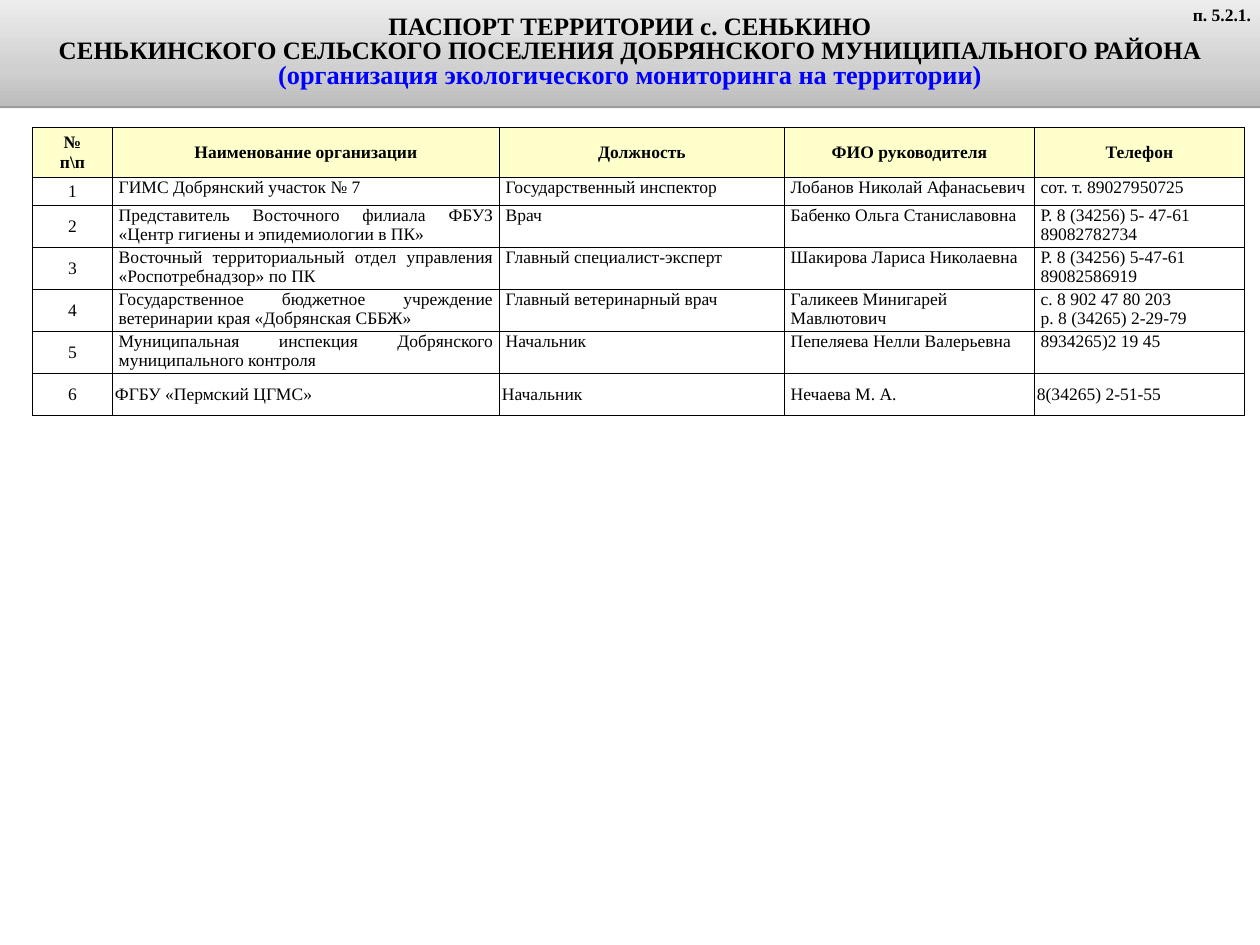
from dataclasses import dataclass

from lxml import etree
from pptx import Presentation
from pptx.dml.color import RGBColor
from pptx.enum import text as tx
from pptx.oxml import ns
from pptx.util import Pt

MAIN = ns.nsdecls("a")


@dataclass(frozen=True)
class Theme:
    font: str = "Times New Roman"
    ink: str = "000000"
    blue: str = "0000FF"
    head: str = "FFFFCC"
    body: str = "FFFFFF"
    grad: tuple = ((0, "BCBCBC"), (35, "D0D0D0"), (100, "EDEDED"))
    title: float = 20
    sub: float = 21
    text: float = 14
    line: float = 1


THEME = Theme()

TITLE = (
    ("ПАСПОРТ ТЕРРИТОРИИ с. СЕНЬКИНО", THEME.title, THEME.ink),
    ("СЕНЬКИНСКОГО СЕЛЬСКОГО ПОСЕЛЕНИЯ ДОБРЯНСКОГО МУНИЦИПАЛЬНОГО РАЙОНА",
     THEME.title, THEME.ink),
    ("(организация экологического мониторинга на территории)",
     THEME.sub, THEME.blue),
)
HEADS = ("№\nп\\п", "Наименование организации", "Должность",
         "ФИО руководителя", "Телефон")
STAFF = (
    ("ГИМС Добрянский участок № 7", "Государственный инспектор",
     "Лобанов Николай Афанасьевич", "сот. т. 89027950725"),
    ("Представитель Восточного филиала ФБУЗ «Центр гигиены и эпидемиологии в ПК»",
     "Врач", "Бабенко Ольга Станиславовна",
     "Р. 8 (34256) 5- 47-61\n89082782734"),
    ("Восточный территориальный отдел управления «Роспотребнадзор» по ПК",
     "Главный специалист-эксперт", "Шакирова Лариса Николаевна",
     "Р. 8 (34256) 5-47-61\n89082586919"),
    ("Государственное бюджетное учреждение ветеринарии края «Добрянская СББЖ»",
     "Главный ветеринарный врач", "Галикеев Минигарей Мавлютович",
     "с. 8 902 47 80 203\nр. 8 (34265) 2-29-79"),
    ("Муниципальная инспекция Добрянского муниципального контроля",
     "Начальник", "Пепеляева Нелли Валерьевна", "8934265)2 19 45"),
    ("ФГБУ «Пермский ЦГМС»", "Начальник", "Нечаева М. А.", "8(34265) 2-51-55"),
)
COLS = (64, 309.6, 228, 200, 168)
ROWS = (40, 22.4) + (33.6,) * 5


def assign(item, values):
    for name, value in values.items():
        setattr(item, name, value)


def style(para, align, size=THEME.text, color=THEME.ink, bold=False):
    para.alignment = align
    for run in para.runs:
        assign(run.font, {"name": THEME.font, "size": Pt(size), "bold": bold})
        run.font.color.rgb = RGBColor.from_string(color)


def place(shape, box):
    names = ("left", "top", "width", "height")
    assign(shape, dict(zip(names, map(Pt, box))))


def inset(item, wide, high):
    assign(item, {"margin_left": Pt(wide), "margin_right": Pt(wide),
                  "margin_top": Pt(high), "margin_bottom": Pt(high)})


def banner(slide, box):
    shape = slide.shapes.title
    place(shape, box)
    stops = "".join(
        f'<a:gs pos="{pos * 1000}"><a:srgbClr val="{color}"/></a:gs>'
        for pos, color in THEME.grad)
    parts = (
        f'<a:prstGeom {MAIN} prst="rect"><a:avLst/></a:prstGeom>',
        f'<a:gradFill {MAIN} rotWithShape="1"><a:gsLst>{stops}</a:gsLst>'
        '<a:lin ang="16200000" scaled="0"/></a:gradFill>',
        f'<a:ln {MAIN}><a:noFill/></a:ln>',
        f'<a:effectLst {MAIN}><a:outerShdw blurRad="0" dist="{Pt(1.6)}" '
        f'dir="5400000" rotWithShape="0"><a:srgbClr val="{THEME.ink}">'
        '<a:alpha val="38000"/></a:srgbClr></a:outerShdw></a:effectLst>',
    )
    for part in parts:
        shape._element.spPr.append(etree.fromstring(part))
    frame = shape.text_frame
    assign(frame, {"word_wrap": True, "auto_size": tx.MSO_AUTO_SIZE.NONE,
                   "vertical_anchor": tx.MSO_ANCHOR.MIDDLE})
    inset(frame, 7.2, 3.6)
    frame.text = "\n".join(line for line, _, _ in TITLE)
    for para, (_, size, color) in zip(frame.paragraphs, TITLE):
        para.line_spacing = 0.8
        style(para, tx.PP_ALIGN.CENTER, size, color, True)


def label(slide, box):
    frame = slide.shapes.add_textbox(*map(Pt, box)).text_frame
    frame.word_wrap = True
    inset(frame, 7.2, 3.6)
    frame.text = "п. 5.2.1."
    style(frame.paragraphs[0], tx.PP_ALIGN.RIGHT, bold=True)


def border(cell):
    props = cell._tc.get_or_add_tcPr()
    for side in "LRTB":
        props.append(etree.fromstring(
            f'<a:ln{side} {MAIN} w="{Pt(THEME.line)}"><a:solidFill>'
            f'<a:srgbClr val="{THEME.ink}"/></a:solidFill></a:ln{side}>'))


def fill_cell(cell, words, row, col):
    head, last = row == 0, row == len(STAFF)
    mid = head or last or col == 0
    border(cell)
    cell.fill.solid()
    cell.fill.fore_color.rgb = RGBColor.from_string(
        THEME.head if head else THEME.body)
    cell.vertical_anchor = tx.MSO_ANCHOR.MIDDLE if mid else tx.MSO_ANCHOR.TOP
    inset(cell, *((2, 2) if mid else (5, 0)))
    if last and col == 3:
        cell.margin_left = Pt(5)
    if head or col == 0:
        align = tx.PP_ALIGN.CENTER
    elif col == 1 and not last:
        align = tx.PP_ALIGN.JUSTIFY
    else:
        align = tx.PP_ALIGN.LEFT
    cell.text = words
    for para in cell.text_frame.paragraphs:
        style(para, align, bold=head)


def roster(slide, box):
    data = [HEADS] + [(str(num), *row) for num, row in enumerate(STAFF, 1)]
    table = slide.shapes.add_table(
        len(ROWS), len(COLS), *map(Pt, box)).table
    for col, width in zip(table.columns, COLS):
        col.width = Pt(width)
    for row, height in zip(table.rows, ROWS):
        row.height = Pt(height)
    for r, line in enumerate(data):
        for c, words in enumerate(line):
            fill_cell(table.cell(r, c), words, r, c)


def main():
    deck = Presentation()
    assign(deck, {"slide_width": Pt(1008), "slide_height": Pt(756)})
    slide = deck.slides.add_slide(deck.slide_layouts[5])
    banner(slide, (0, 0, 1008, 85))
    label(slide, (940, 0, 68, 24))
    roster(slide, (26, 102, sum(COLS), sum(ROWS)))
    deck.save("out.pptx")


if __name__ == "__main__":
    main()
